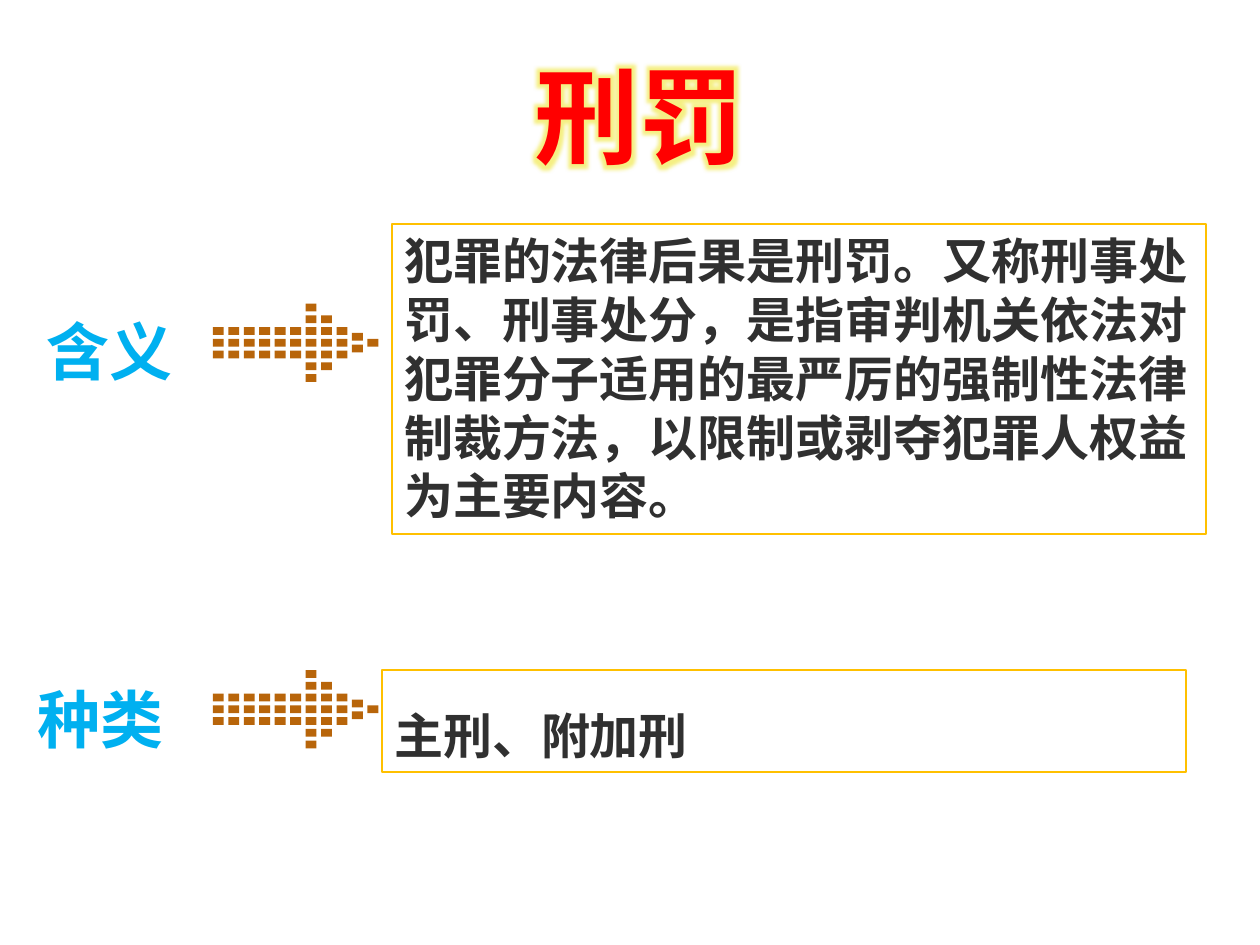
"""Build the slide on the meaning and kinds of criminal punishment."""
from lxml import etree
from pptx import Presentation
from pptx.dml.color import RGBColor
from pptx.enum import shapes, text
from pptx.oxml import parse_xml
from pptx.oxml.ns import nsdecls, qn
from pptx.util import Pt

WHITE = RGBColor(0xFF, 0xFF, 0xFF)
GOLD = RGBColor(0xFF, 0xC0, 0x00)
BROWN = RGBColor(0xB8, 0x65, 0x0A)
BLUE = RGBColor(0x00, 0xB0, 0xF0)
DARK = RGBColor(0x30, 0x30, 0x30)
RED = RGBColor(0xFF, 0x00, 0x00)
CJK = "Noto Sans CJK SC"

ARROW_LEFT = 121.7
CELL_WIDTH, CELL_HEIGHT = 6.2, 4.4
COLUMN_STEP, ROW_STEP = 8.83, 6.72
CELLS_PER_COLUMN = [3] * 6 + [7, 5, 3, 2, 1]

deck = Presentation()
deck.slide_width, deck.slide_height = Pt(720), Pt(540)
page = deck.slides.add_slide(deck.slide_layouts[6])


def write(box, words, size, font, color, spacing=None, align=text.PP_ALIGN.LEFT, wrap=True):
    frame = box.text_frame
    frame.text = words
    frame.word_wrap = wrap
    frame.auto_size = text.MSO_AUTO_SIZE.SHAPE_TO_FIT_TEXT
    frame.vertical_anchor = text.MSO_ANCHOR.TOP
    para = frame.paragraphs[0]
    para.alignment = align
    para.line_spacing = spacing
    span = para.runs[0]
    span.font.size, span.font.bold, span.font.name = Pt(size), True, font
    span.font.color.rgb = color
    properties = span.font._element
    etree.SubElement(properties, qn("a:ea")).set("typeface", CJK)
    return properties


def draw_dotted_arrow(top):
    builder = None
    for column, count in enumerate(CELLS_PER_COLUMN):
        for index in range(count):
            left = ARROW_LEFT + column * COLUMN_STEP
            upper = top + (3 + index - (count - 1) / 2) * ROW_STEP
            right, lower = Pt(left + CELL_WIDTH), Pt(upper + CELL_HEIGHT)
            left, upper = Pt(left), Pt(upper)
            if builder is None:
                builder = page.shapes.build_freeform(left, upper, scale=1.0)
            else:
                builder.move_to(left, upper)
            builder.add_line_segments([(right, upper), (right, lower), (left, lower)], close=True)
    arrow = builder.convert_to_shape()
    arrow.shadow.inherit = False
    arrow.fill.solid()
    arrow.fill.fore_color.rgb = BROWN
    arrow.line.fill.background()


MEANING = ("犯罪的法律后果是刑罚。又称刑事处罚、刑事处分，是指审判机关依法对"
           "犯罪分子适用的最严厉的强制性法律制裁方法，以限制或剥夺犯罪人权益为主要内容。")
sections = [
    ("含义", (19.4, 162), 173.5, MEANING, (223.9, 128.2, 465.1, 177.1), None),
    ("种类", (14.4, 372.2), 383, "主刑、附加刑", (218.2, 383, 459.4, 58.3), 1.5),
]
for name, label_corner, arrow_top, words, bounds, spacing in sections:
    draw_dotted_arrow(arrow_top)

    label = page.shapes.add_textbox(*map(Pt, label_corner), Pt(102.2), Pt(64.1))
    write(label, name, 36, "Arial", BLUE, 1.3)

    panel = page.shapes.add_shape(shapes.MSO_SHAPE.RECTANGLE, *map(Pt, bounds))
    panel.shadow.inherit = False
    panel.fill.solid()
    panel.fill.fore_color.rgb = WHITE
    panel.line.color.rgb = GOLD
    panel.line.width = Pt(1)
    write(panel, words, 28, CJK, DARK, spacing)

title = page.shapes.add_textbox(Pt(298.1), Pt(25.9), Pt(134.6), Pt(79.9))
properties = write(title, "刑罚", 60, CJK, RED, align=text.PP_ALIGN.CENTER, wrap=False)
outline = parse_xml(
    f'<a:ln {nsdecls("a")} w="19050"><a:solidFill><a:srgbClr val="FEFEFE"/></a:solidFill></a:ln>')
glow = parse_xml(
    f'<a:effectLst {nsdecls("a")}><a:glow rad="101600"><a:srgbClr val="F0E632">'
    '<a:alpha val="60000"/></a:srgbClr></a:glow></a:effectLst>')
properties.insert(0, outline)
properties.find(qn("a:solidFill")).addnext(glow)

deck.save("out.pptx")
